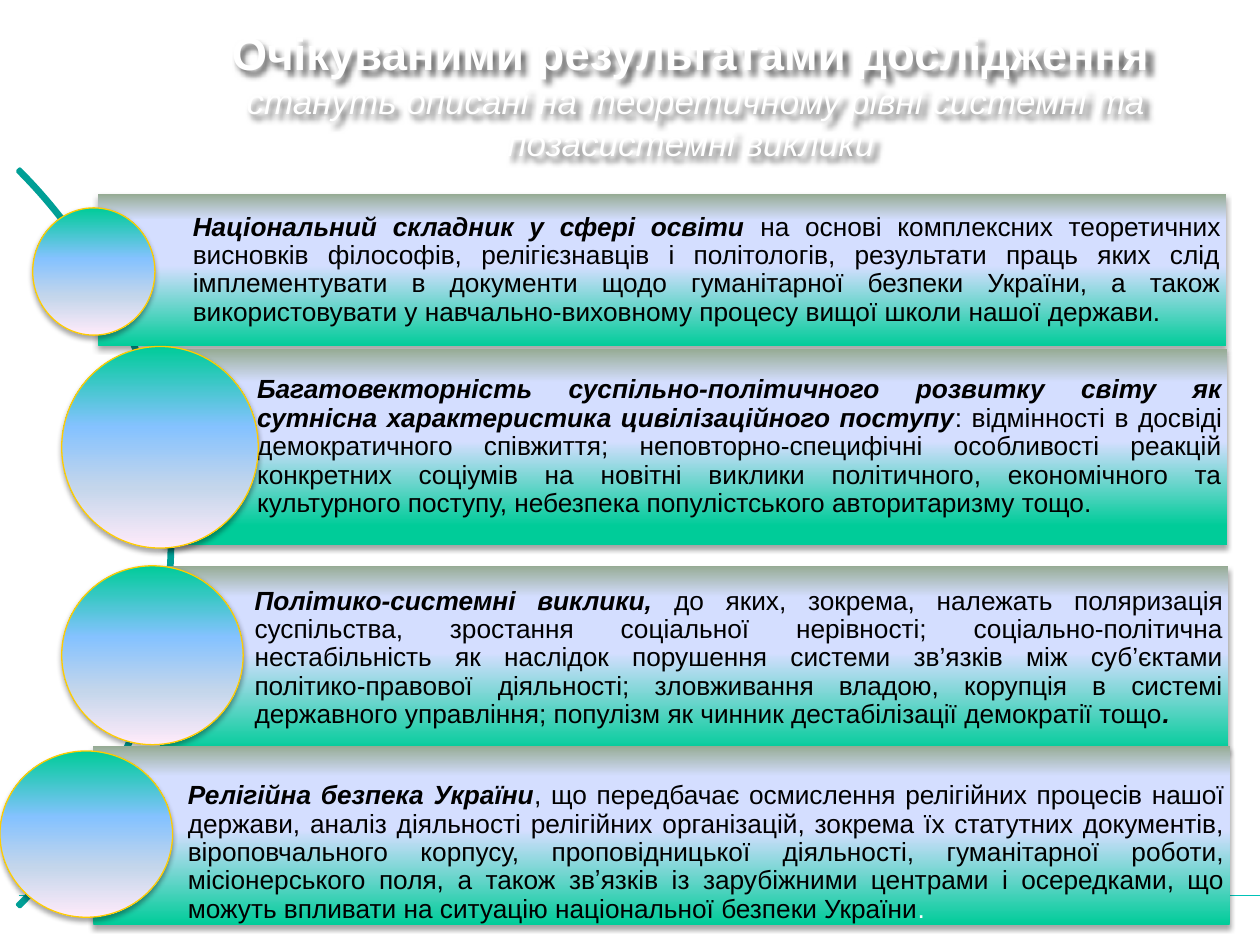
from lxml.etree import SubElement
from pptx import Presentation
from pptx.dml.color import RGBColor
from pptx.enum.shapes import MSO_CONNECTOR, MSO_SHAPE
from pptx.enum.text import MSO_ANCHOR, MSO_AUTO_SIZE, PP_ALIGN
from pptx.oxml import parse_xml
from pptx.oxml.ns import nsdecls, qn
from pptx.util import Inches, Pt

WHITE = RGBColor(0xFF, 0xFF, 0xFF)
BLACK = RGBColor(0, 0, 0)
TEAL = RGBColor(0x00, 0x9F, 0x96)
LIGHT_TEAL = RGBColor(0x00, 0xC2, 0xB7)
GOLD = RGBColor(0xFF, 0xCC, 0x00)
GREEN = RGBColor(0x00, 0xCC, 0x99)
LAVENDER = RGBColor(0xD4, 0xDE, 0xFF)
SAGE = RGBColor(0x96, 0xAB, 0x94)
SKY = RGBColor(0x85, 0xC2, 0xFF)
MIST = RGBColor(0xC4, 0xD6, 0xEB)
PINK = RGBColor(0xFF, 0xEB, 0xFA)

FONT = "Arial"
CIRCLE_STOPS = [(0, GREEN), (40, SKY), (70, MIST), (100, PINK)]
EVEN_INSETS = (0.04, 0.04)
LOW_INSETS = (0.28, 0)

# Each row: panel box, circle box, first gradient stop, top and bottom insets,
# bold lead, text, ending
ROWS = [
    ((0.78, 1.54, 8.95, 1.21), (0.26, 1.65, 0.97, 1.01), 0, EVEN_INSETS,
     "Національний складник у сфері освіти",
     " на основі комплексних теоретичних висновків філософів, релігієзнавців і "
     "політологів, результати праць яких слід імплементувати в документи щодо "
     "гуманітарної безпеки України, а також використовувати у навчально-виховному "
     "процесу вищої школи нашої держави.", None),
    ((1.29, 2.77, 8.45, 1.56), (0.49, 2.75, 1.56, 1.6), 10, EVEN_INSETS,
     "Багатовекторність суспільно-політичного розвитку світу як сутнісна "
     "характеристика цивілізаційного поступу",
     ": відмінності в досвіді демократичного співжиття; неповторно-специфічні "
     "особливості реакцій конкретних соціумів на новітні виклики політичного, "
     "економічного та культурного поступу, небезпека популістського "
     "авторитаризму тощо.", None),
    ((1.27, 4.49, 8.48, 1.47), (0.49, 4.49, 1.44, 1.42), 0, EVEN_INSETS,
     "Політико-системні виклики,",
     " до яких, зокрема, належать поляризація суспільства, зростання соціальної "
     "нерівності; соціально-політична нестабільність як наслідок порушення системи "
     "зв’язків між суб’єктами політико-правової діяльності; зловживання владою, "
     "корупція в системі державного управління; популізм як чинник дестабілізації "
     "демократії тощо", (BLACK, True)),
    ((0.74, 5.92, 9.02, 1.42), (0, 5.96, 1.37, 1.32), 0, LOW_INSETS,
     "Релігійна безпека України",
     ", що передбачає осмислення релігійних процесів нашої держави, аналіз діяльності "
     "релігійних організацій, зокрема їх статутних документів, віроповчального корпусу, "
     "проповідницької діяльності, гуманітарної роботи, місіонерського поля, а також "
     "звʼязків із зарубіжними центрами і осередками, що можуть впливати на ситуацію "
     "національної безпеки України", (WHITE, False)),
]


def shadow_effect(distance=1.8, angle=90, alpha=35):
    return parse_xml(
        f'<a:effectLst {nsdecls("a")}><a:outerShdw blurRad="{Pt(3.1)}" '
        f'dist="{Pt(distance)}" dir="{angle * 60000}" rotWithShape="0">'
        f'<a:srgbClr val="000000"><a:alpha val="{alpha * 1000}"/>'
        '</a:srgbClr></a:outerShdw></a:effectLst>')


def set_gradient(sp, stops, angle):
    """Fill with (percent, colour) stops; the angle is clockwise in degrees."""
    sp.fill.gradient()
    grad = sp._element.spPr.find(qn("a:gradFill"))
    for child in list(grad):
        grad.remove(child)
    gs_list = SubElement(grad, qn("a:gsLst"))
    for percent, color in stops:
        gs = SubElement(gs_list, qn("a:gs"), pos=str(percent * 1000))
        SubElement(gs, qn("a:srgbClr"), val=str(color))
    SubElement(grad, qn("a:lin"), ang=str(angle * 60000), scaled="0")


def add_shape(slide, kind, box, line=None, width=0.75):
    sp = slide.shapes.add_shape(kind, *map(Inches, box))
    sp.shadow.inherit = False
    if line is None:
        sp.line.fill.background()
    else:
        sp.line.color.rgb = line
        sp.line.width = Pt(width)
    return sp


def cast_shadow(sp):
    spPr = sp._element.spPr
    spPr.replace(spPr.find(qn("a:effectLst")), shadow_effect())


def add_run(p, text, size, color, bold=False, italic=False):
    r = p.add_run()
    r.text = text
    r.font.size, r.font.name = Pt(size), FONT
    r.font.bold, r.font.italic = bold, italic
    r.font.color.rgb = color
    return r


def add_title(slide):
    """Place the white title; its unfilled frame gives the letters their shadow."""
    title = slide.shapes.title
    title.left, title.top, title.width, title.height = map(Inches, (1.46, 0.07, 8.05, 1.28))
    title.fill.background()
    title.line.fill.background()
    title._element.spPr.append(shadow_effect(3, 45, 60))
    tf = title.text_frame
    tf.word_wrap = True
    tf.auto_size = MSO_AUTO_SIZE.NONE
    tf.vertical_anchor = MSO_ANCHOR.BOTTOM
    p = tf.paragraphs[0]
    p.alignment = PP_ALIGN.CENTER
    heading = add_run(p, "Очікуваними результатами дослідження", 26, WHITE, bold=True)
    p.add_line_break()
    subheading = add_run(
        p, " стануть описані на теоретичному рівні системні та позасистемні виклики",
        20, WHITE, italic=True)
    for r in (heading, subheading):
        r.font._element.find(qn("a:solidFill")).addnext(shadow_effect(3, 45, 60))


def add_base_line(slide):
    line = slide.shapes.add_connector(
        MSO_CONNECTOR.STRAIGHT, Inches(0.15), Inches(7.11), Inches(10), Inches(7.11))
    line.line.color.rgb = LIGHT_TEAL
    line.line.width = Pt(0.75)
    SubElement(line._element.spPr, qn("a:effectLst"))
    line._element.remove(line._element.find(qn("p:style")))


def add_arc(slide):
    arc = add_shape(slide, MSO_SHAPE.BLOCK_ARC, (-6.91, 0.13, 8.28, 8.28), TEAL, 2)
    arc.fill.background()
    for i, value in enumerate((189, 27, 0.003)):
        arc.adjustments[i] = value


def add_panel(slide, box, first_stop, insets, lead, text, ending):
    panel = add_shape(slide, MSO_SHAPE.RECTANGLE, box)
    set_gradient(panel, [(first_stop, GREEN), (53, LAVENDER), (83, LAVENDER), (100, SAGE)], 270)
    cast_shadow(panel)
    tf = panel.text_frame
    tf.word_wrap = True
    tf.vertical_anchor = MSO_ANCHOR.MIDDLE
    tf.margin_left, tf.margin_right = Inches(0.75), Inches(0.04)
    tf.margin_top, tf.margin_bottom = map(Inches, insets)
    p = tf.paragraphs[0]
    p.alignment = PP_ALIGN.JUSTIFY
    p.line_spacing = 0.9
    add_run(p, lead, 15, BLACK, bold=True, italic=True)
    add_run(p, text, 15, BLACK)
    if ending:
        color, strong = ending
        add_run(p, ".", 15, color, bold=strong, italic=strong)


def add_circle(slide, box):
    circle = add_shape(slide, MSO_SHAPE.OVAL, box, GOLD)
    set_gradient(circle, CIRCLE_STOPS, 90)
    cast_shadow(circle)


def main():
    prs = Presentation()
    prs.slide_width, prs.slide_height = Inches(10), Inches(7.5)
    slide = prs.slides.add_slide(prs.slide_layouts[5])
    add_base_line(slide)
    add_title(slide)
    add_arc(slide)
    for panel_box, circle_box, *content in ROWS:
        add_panel(slide, panel_box, *content)
        add_circle(slide, circle_box)
    prs.save("out.pptx")


if __name__ == "__main__":
    main()
